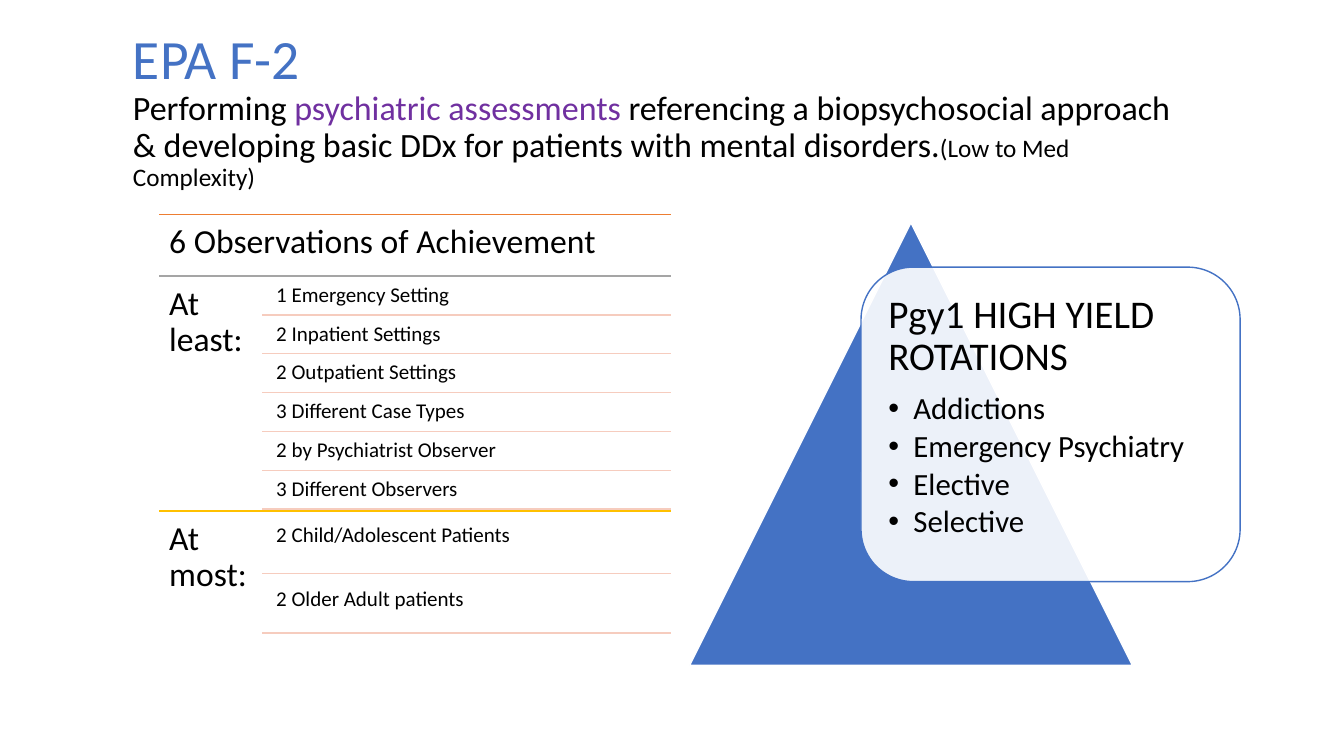
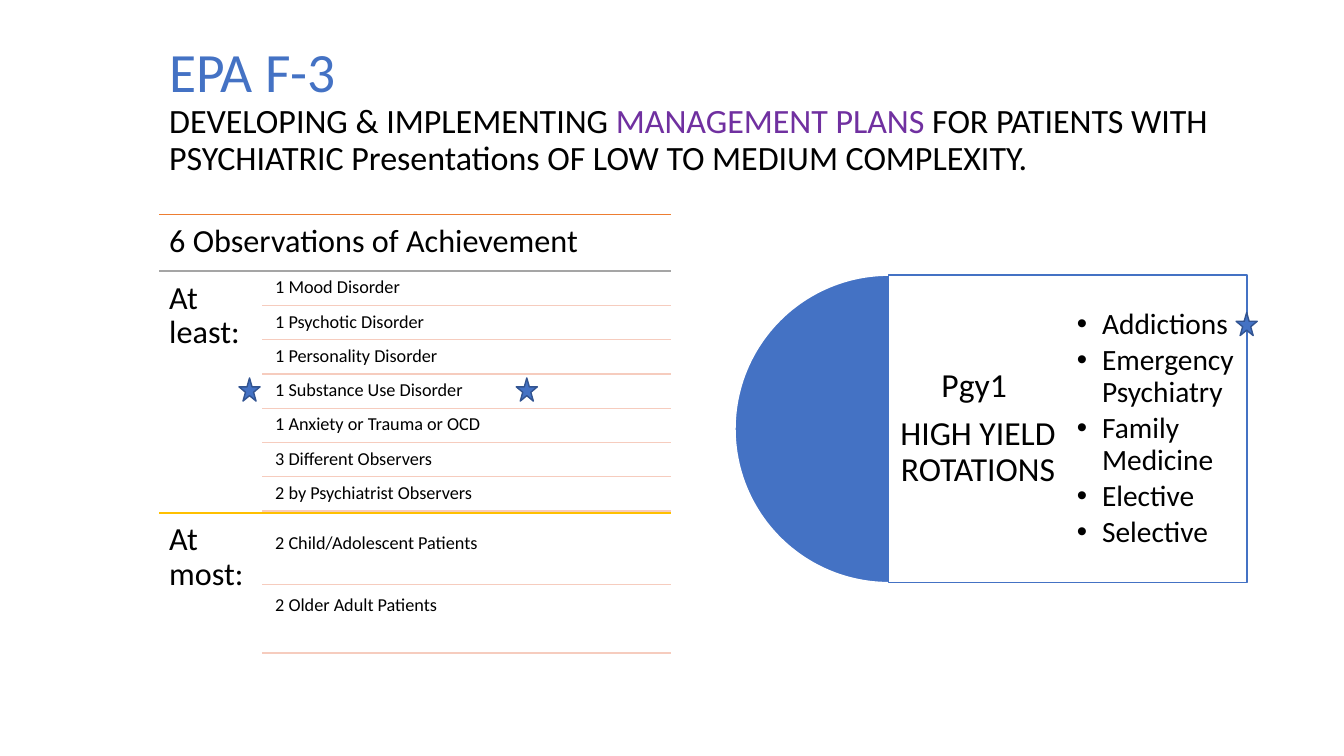
import pptx
import pptx.dml.color
import pptx.enum.shapes
import pptx.enum.text
import pptx.oxml.ns
import pptx.util
from dataclasses import dataclass
from lxml import etree

Inches = pptx.util.Inches
Pt = pptx.util.Pt
SHAPE = pptx.enum.shapes.MSO_SHAPE
ANCHOR = pptx.enum.text.MSO_ANCHOR
ALIGN = pptx.enum.text.PP_ALIGN
qn = pptx.oxml.ns.qn


@dataclass(frozen=True)
class Theme:
    font: str = "Calibri"
    ink: str = "000000"
    paper: str = "FFFFFF"
    blue: str = "4472C4"
    star_edge: str = "325491"
    purple: str = "7030A0"
    heading_rule: str = "ED7D31"
    least_rule: str = "A5A5A5"
    most_rule: str = "FFC000"
    item_rule: str = "F6CCBE"
    code_size: float = 39.6
    summary_size: float = 24.3
    aside_size: float = 18
    line_spacing: float = 0.9
    text_gap: float = 0.35
    bullet_gap: float = 0.15
    rule_width: float = 1


class Deck:
    left, label_right, right = 1.58, 2.6, 6.66
    top = 2.13
    item_left, item_gap = 2.68, 0.02

    def __init__(self, theme):
        self.theme = theme
        self.presentation = pptx.Presentation()
        self.presentation.slide_width = Inches(13.33)
        self.presentation.slide_height = Inches(7.5)
        self.slide = None

    def new_slide(self):
        blank = self.presentation.slide_layouts[6]
        self.slide = self.presentation.slides.add_slide(blank)

    def color(self, value):
        return pptx.dml.color.RGBColor.from_string(value)

    def format_run(self, run, size, color):
        run.font.name = self.theme.font
        run.font.size = Pt(size)
        run.font.color.rgb = self.color(color)

    def frame(self, x, y, w, h, inset, anchor=ANCHOR.TOP):
        frame = self.slide.shapes.add_textbox(
            Inches(x), Inches(y), Inches(w), Inches(h)).text_frame
        frame.word_wrap = True
        frame.vertical_anchor = anchor
        frame.margin_left = frame.margin_right = Inches(inset)
        frame.margin_top = frame.margin_bottom = Inches(inset)
        return frame

    def bullet(self, paragraph):
        paragraph.level = 1
        properties = paragraph._p.get_or_add_pPr()
        properties.set("marL", str(Inches(0.25)))
        properties.set("indent", str(-Inches(0.25)))
        etree.SubElement(properties, qn("a:buFont")).set("typeface", "Arial")
        etree.SubElement(properties, qn("a:buChar")).set("char", "•")

    def add_lines(self, frame, lines, size, bulleted=False, align=ALIGN.LEFT):
        for line in lines:
            paragraph = frame.paragraphs[-1]
            if paragraph.text:
                paragraph = frame.add_paragraph()
            paragraph.text = line
            if bulleted:
                self.bullet(paragraph)
            gap = self.theme.bullet_gap if bulleted else self.theme.text_gap
            paragraph.alignment = align
            paragraph.line_spacing = self.theme.line_spacing
            paragraph.space_after = Pt(round(size * gap, 1))
            for run in paragraph.runs:
                self.format_run(run, size, self.theme.ink)

    def title(self, x, y, w, h, code, summary):
        frame = self.frame(x, y, w, h, 0.1)
        frame.margin_top = frame.margin_bottom = Inches(0.05)
        frame.text = code
        code_line = frame.paragraphs[0]
        self.format_run(code_line.runs[0], self.theme.code_size, self.theme.blue)
        summary_line = frame.add_paragraph()
        for words, size, color in summary:
            run = summary_line.add_run()
            run.text = words
            self.format_run(run, size, color)
        for paragraph in frame.paragraphs:
            paragraph.line_spacing = self.theme.line_spacing

    def rule(self, x, y, color):
        line = self.slide.shapes.add_connector(
            pptx.enum.shapes.MSO_CONNECTOR.STRAIGHT,
            Inches(x), Inches(y), Inches(self.right), Inches(y))
        line.line.color.rgb = self.color(color)
        line.line.width = Pt(self.theme.rule_width)
        etree.SubElement(line._element.spPr, qn("a:effectLst"))

    def shape(self, kind, x, y, w, h, fill, edge, opacity=100):
        shape = self.slide.shapes.add_shape(
            kind, Inches(x), Inches(y), Inches(w), Inches(h))
        shape.shadow.inherit = False
        shape.fill.solid()
        shape.fill.fore_color.rgb = self.color(fill)
        shape.line.color.rgb = self.color(edge)
        shape.line.width = Pt(self.theme.rule_width)
        if opacity < 100:
            tint = shape._element.spPr.find(qn("a:solidFill"))[0]
            etree.SubElement(tint, qn("a:alpha")).set("val", str(opacity * 1000))
        return shape

    def star(self, x, y):
        self.shape(SHAPE.STAR_5_POINT, x, y, 0.21, 0.23,
                   self.theme.blue, self.theme.star_edge)

    def section(self, y, h, label, right, size, color):
        self.rule(self.left, y, color)
        frame = self.frame(self.left, y, right - self.left, h, 0.1)
        self.add_lines(frame, [label], size)

    def item(self, y, bottom, words, size, inset):
        frame = self.frame(self.item_left, y, self.right - self.item_left,
                           bottom - y, inset)
        self.add_lines(frame, [words], size)
        self.rule(self.label_right, bottom, self.theme.item_rule)

    def observations(self, heading_height, least_height, least, most,
                     label_size, item_size, inset):
        theme = self.theme
        least_top = self.top + heading_height
        most_top = least_top + least_height
        self.section(self.top, heading_height, "6 Observations of Achievement",
                     self.right, label_size, theme.heading_rule)
        self.section(least_top, least_height, "At least:", self.label_right,
                     label_size, theme.least_rule)
        pitch = (least_height - self.item_gap) / len(least)
        for index, words in enumerate(least):
            row = least_top + index * pitch
            self.item(row + self.item_gap, row + pitch, words, item_size, inset)
        self.section(most_top, 1.2, "At most:", self.label_right,
                     label_size, theme.most_rule)
        for y, bottom, words in most:
            self.item(y, bottom, words, item_size, inset)

    def rotations_triangle(self, heading, rotations):
        theme = self.theme
        self.shape(SHAPE.ISOSCELES_TRIANGLE, 6.84, 2.21, 4.39, 4.39,
                   theme.blue, theme.paper)
        self.shape(SHAPE.ROUNDED_RECTANGLE, 8.54, 2.65, 3.76, 3.12,
                   theme.paper, theme.blue, 90)
        frame = self.frame(8.69, 2.8, 3.46, 2.82, 0.12)
        self.add_lines(frame, [heading], 28)
        self.add_lines(frame, rotations, 22, bulleted=True)

    def rotations_half_circle(self, heading, rotations):
        theme = self.theme
        y, size, column = 2.73, 3.05, 1.78
        panel_left = 8.81
        half_circle = self.shape(SHAPE.PIE, 7.29, y, size, size,
                                 theme.blue, theme.paper)
        half_circle.adjustments[0] = 54
        half_circle.adjustments[1] = 162
        self.shape(SHAPE.RECTANGLE, panel_left, y, 2 * column, size,
                   theme.paper, theme.blue, 90)
        heading_frame = self.frame(panel_left, y, column, size, 0.1,
                                   ANCHOR.MIDDLE)
        self.add_lines(heading_frame, heading, 24, align=ALIGN.CENTER)
        list_frame = self.frame(panel_left + column, y, column, size, 0.09,
                                ANCHOR.MIDDLE)
        self.add_lines(list_frame, rotations, 21, bulleted=True)


def assessments(deck):
    theme = deck.theme
    deck.new_slide()
    deck.title(1.22, 0.26, 10.61, 1.75, "EPA F-2", [
        ("Performing ", theme.summary_size, theme.ink),
        ("psychiatric assessments ", theme.summary_size, theme.purple),
        ("referencing a biopsychosocial approach & developing basic DDx "
         "for patients with mental disorders.", theme.summary_size, theme.ink),
        ("(Low to Med Complexity)", theme.aside_size, theme.ink),
    ])
    deck.observations(
        0.61, 2.33,
        ["1 Emergency Setting", "2 Inpatient Settings", "2 Outpatient Settings",
         "3 Different Case Types", "2 by Psychiatrist Observer",
         "3 Different Observers"],
        [(5.14, 5.69, "2 Child/Adolescent Patients"),
         (5.78, 6.28, "2 Older Adult patients")],
        label_size=24, item_size=15, inset=0.06)
    deck.rotations_triangle(
        "Pgy1 HIGH YIELD ROTATIONS",
        ["Addictions", "Emergency Psychiatry", "Elective", "Selective"])


def management_plans(deck):
    theme = deck.theme
    deck.new_slide()
    deck.title(1.58, 0.39, 10.5, 1.45, "EPA F-3", [
        ("DEVELOPING & IMPLEMENTING ", theme.summary_size, theme.ink),
        ("MANAGEMENT PLANS ", theme.summary_size, theme.purple),
        ("FOR PATIENTS WITH PSYCHIATRIC Presentations OF LOW TO MEDIUM "
         "COMPLEXITY.", theme.summary_size, theme.ink),
    ])
    deck.observations(
        0.56, 2.4,
        ["1 Mood Disorder", "1 Psychotic Disorder", "1 Personality Disorder",
         "1 Substance Use Disorder", "1 Anxiety or Trauma or OCD",
         "3 Different Observers", "2 by Psychiatrist Observers"],
        [(5.25, 5.8, "2 Child/Adolescent Patients"),
         (5.86, 6.48, "2 Older Adult Patients")],
        label_size=23, item_size=13, inset=0.05)
    deck.rotations_half_circle(
        ["Pgy1 ", "HIGH YIELD ROTATIONS"],
        ["Addictions", "Emergency Psychiatry", "Family Medicine", "Elective",
         "Selective"])
    for x, y in [(12.26, 3.1), (2.37, 3.75), (5.12, 3.75)]:
        deck.star(x, y)


def main():
    deck = Deck(Theme())
    assessments(deck)
    management_plans(deck)
    deck.presentation.save("out.pptx")


if __name__ == "__main__":
    main()
